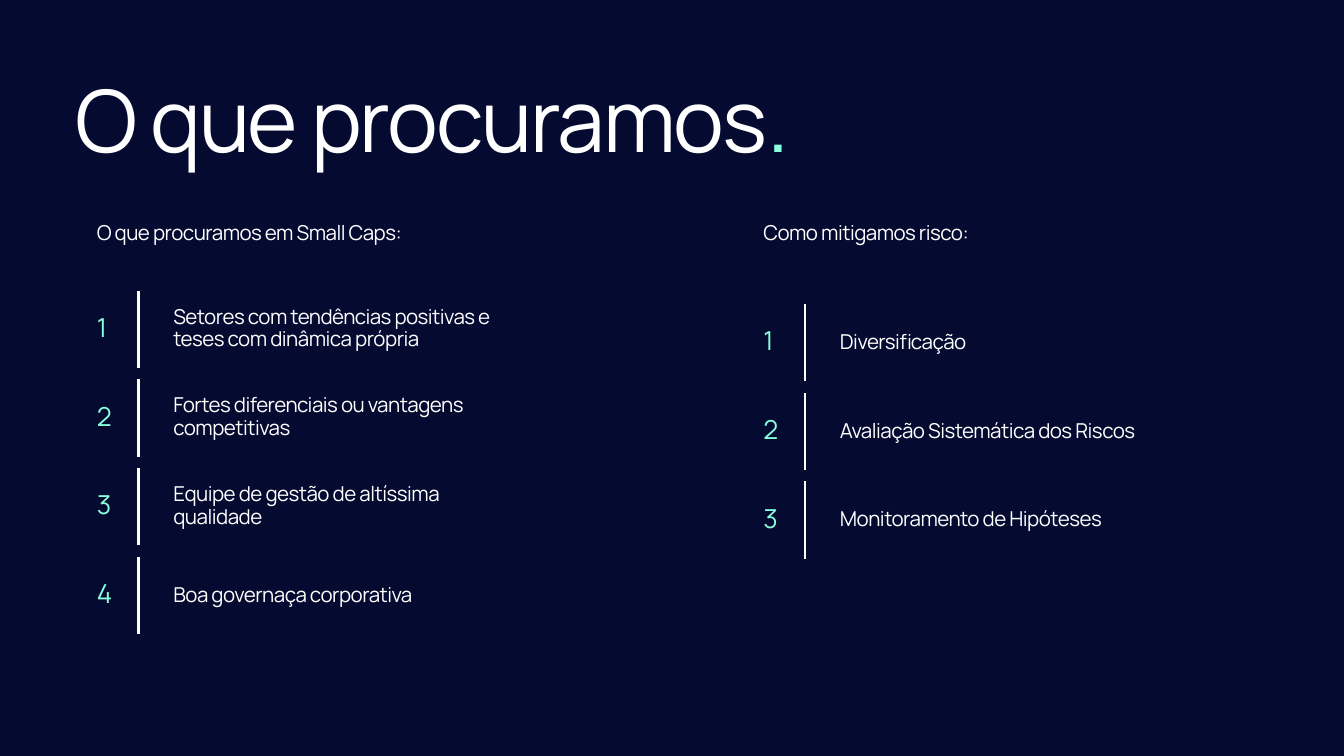
import pptx
import pptx.dml.color
import pptx.enum.shapes
import pptx.enum.text
import pptx.oxml.ns
import pptx.util
from lxml import etree

Inches = pptx.util.Inches
Pt = pptx.util.Pt

NAVY, WHITE, MINT = "050A30", "FFFFFF", "89FFDB"
PITCH = 1.32


def color(code):
    return pptx.dml.color.RGBColor.from_string(code)


class Deck:
    font = "Manrope"
    leading = 1.1
    tracking = -0.025

    def __init__(self, width, height):
        self.show = pptx.Presentation()
        self.show.slide_width = Inches(width)
        self.show.slide_height = Inches(height)
        self.slide = self.show.slides.add_slide(self.show.slide_layouts[6])
        fill = self.slide.background.fill
        fill.solid()
        fill.fore_color.rgb = color(NAVY)

    def style(self, run, size, code):
        run.font.name = self.font
        run.font.size = Pt(size)
        run.font.color.rgb = color(code)
        run.font._element.set("spc", str(round(size * self.tracking * 100)))

    def text(self, x, y, w, h, words, size, code=WHITE):
        frame = self.slide.shapes.add_textbox(
            Inches(x), Inches(y), Inches(w), Inches(h)).text_frame
        frame.margin_left = frame.margin_right = 0
        frame.margin_top = frame.margin_bottom = 0
        frame.word_wrap = True
        frame.auto_size = pptx.enum.text.MSO_AUTO_SIZE.SHAPE_TO_FIT_TEXT
        frame.text = words
        para = frame.paragraphs[0]
        para.line_spacing = Pt(size * self.leading)
        self.style(para.runs[0], size, code)
        return para

    def title(self, words):
        para = self.text(1.12, 1.12, 17.14, 1.52, words, 92)
        dot = para.add_run()
        dot.text = "."
        self.style(dot, 92, MINT)

    def bar(self, x, mid, height=1.15):
        line = self.slide.shapes.add_connector(
            pptx.enum.shapes.MSO_CONNECTOR.STRAIGHT,
            Inches(x), Inches(mid + height / 2),
            Inches(x), Inches(mid - height / 2))
        line.line.color.rgb = color(WHITE)
        line.line.width = Pt(3)
        etree.SubElement(line._element.spPr, pptx.oxml.ns.qn("a:effectLst"))

    def item(self, x, mid, number, words, rows):
        tall = 0.35 * rows
        self.text(x, mid - 0.23, 0.5, 0.47, str(number), 28, MINT)
        self.bar(x + 0.62, mid)
        self.text(x + 1.14, mid - tall / 2, 5.06, tall, words, 22)

    def column(self, x, mid, head, items):
        self.text(x, 3.3, 6.73, 0.36, head, 22)
        for i, (words, rows) in enumerate(items):
            self.item(x, mid + i * PITCH, i + 1, words, rows)


def main():
    deck = Deck(20, 11.25)
    deck.title("O que procuramos")
    deck.column(1.44, 4.9, "O que procuramos em Small Caps:", [
        ("Setores com tendências positivas e teses com dinâmica própria", 2),
        ("Fortes diferenciais ou vantagens competitivas", 2),
        ("Equipe de gestão de altíssima qualidade", 2),
        ("Boa governaça corporativa", 1),
    ])
    deck.column(11.36, 5.1, "Como mitigamos risco:", [
        ("Diversificação", 1),
        ("Avaliação Sistemática dos Riscos", 1),
        ("Monitoramento de Hipóteses", 1),
    ])
    deck.show.save("out.pptx")


if __name__ == "__main__":
    main()
